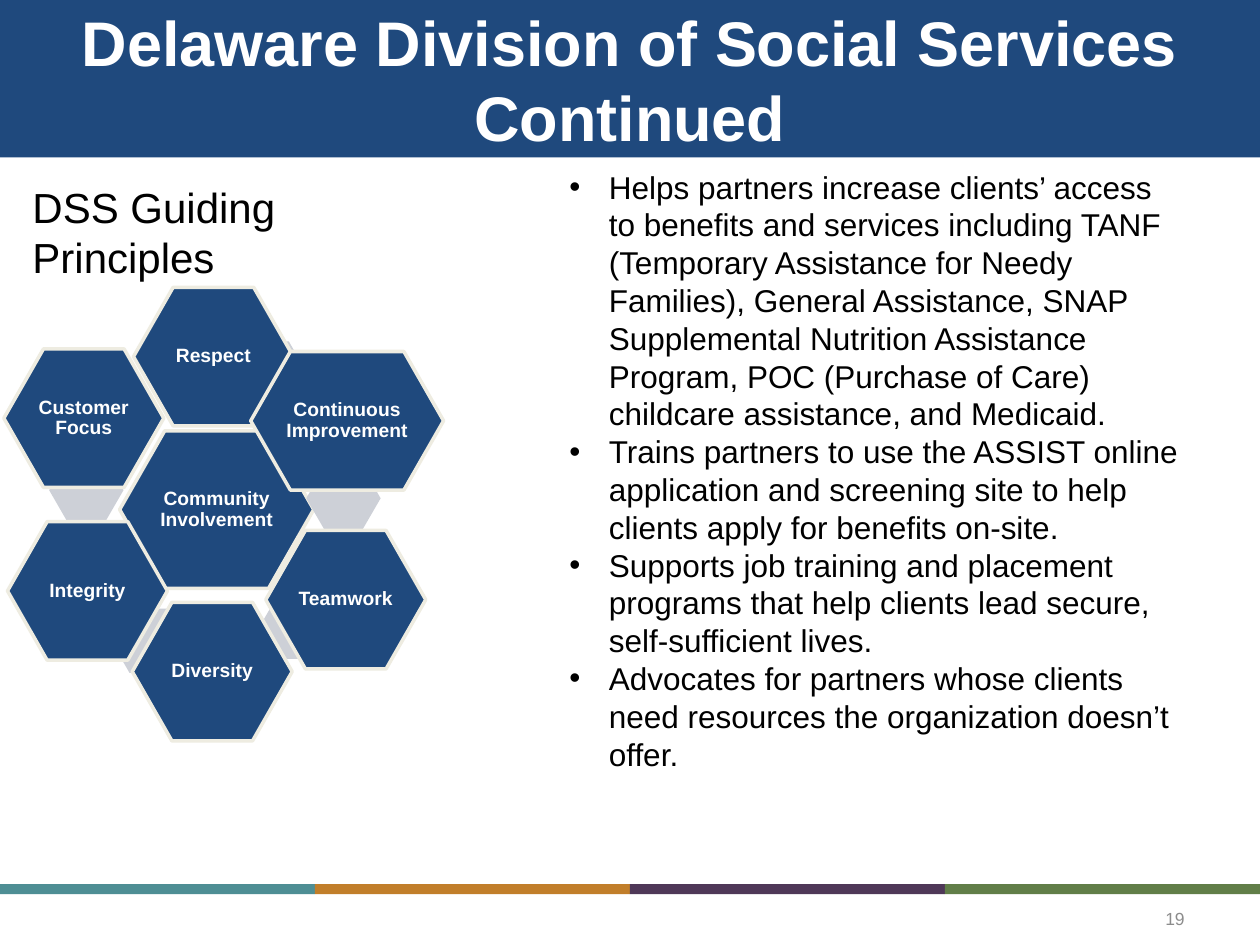
"""Build the guiding principles slide of the Division of Social Services."""
from lxml.etree import SubElement
from pptx import Presentation
from pptx.dml.color import RGBColor as RGB
from pptx.enum.shapes import MSO_SHAPE as Kind
from pptx.enum.text import MSO_ANCHOR as Anchor, MSO_AUTO_SIZE as Auto, PP_ALIGN as Align
from pptx.oxml.ns import qn
from pptx.util import Pt

HUES = {
    "navy": "1F497D", "cream": "EEECE1", "mist": "CDD0D7",
    "white": "FFFFFF", "black": "000000", "gray": "8C8C8C",
    "teal": "4E8E94", "gold": "C17E2A", "plum": "4F3858", "green": "617E48",
}
BANDS = ["teal", "gold", "plum", "green"]
HEX = (91.4, 79.2)
LINK = (42.5, 36.7)
CORE = ("Community Involvement", 68.4, 246.2, 110.9, 90)
RING = [
    ("Respect", 76.3, 164.2, *HEX),
    ("Continuous Improvement", 143.3, 200.9, 110.2, 79.2),
    ("Teamwork", 151.9, 303.1, *HEX),
    ("Integrity", 4.3, 298.1, *HEX),
    ("Diversity", 75.6, 344.2, *HEX),
    ("Customer Focus", 2.2, 199.4, *HEX),
]
LINKS = [
    (133.2, 195.1, *LINK),
    (175, 266.4, *LINK),
    (148.3, 339.8, *LINK),
    (63.4, 347.8, *LINK),
    (28.1, 262.8, 42.5, 34.6),
]
ITEMS = [
    "Helps partners increase clients’ access to benefits and services including "
    "TANF (Temporary Assistance for Needy Families), General Assistance, SNAP "
    "Supplemental Nutrition Assistance Program, POC (Purchase of Care) childcare "
    "assistance, and Medicaid.",
    "Trains partners to use the ASSIST online application and screening site to "
    "help clients apply for benefits on-site.",
    "Supports job training and placement programs that help clients lead secure, "
    "self-sufficient lives.",
    "Advocates for partners whose clients need resources the organization doesn’t offer.",
]


def color(name):
    return RGB.from_string(HUES[name])


def paint(shape, hue):
    shape.fill.solid()
    shape.fill.fore_color.rgb = color(hue)


def place(shape, x, y, w, h):
    shape.left, shape.top, shape.width, shape.height = Pt(x), Pt(y), Pt(w), Pt(h)


def style(para, size, hue, bold=False, align=Align.LEFT):
    para.alignment = align
    for run in para.runs:
        font = run.font
        font.name, font.size, font.bold = "Arial", Pt(size), bold
        font.color.rgb = color(hue)


def add_form(slide, kind, box, hue):
    shape = slide.shapes.add_shape(kind, *map(Pt, box))
    shape.shadow.inherit = False
    paint(shape, hue)
    shape.line.fill.background()
    return shape


def add_value(slide, name, *box):
    shape = add_form(slide, Kind.HEXAGON, box, "navy")
    shape.adjustments[0] = 0.286
    shape.line.color.rgb = color("cream")
    shape.line.width = Pt(2)
    frame = shape.text_frame
    frame.text = name
    frame.word_wrap = True
    frame.vertical_anchor = Anchor.MIDDLE
    frame.margin_left = frame.margin_right = Pt(1.4)
    frame.margin_top = frame.margin_bottom = Pt(1.4)
    para = frame.paragraphs[0]
    para.line_spacing = 0.9
    style(para, 11, "white", True, Align.CENTER)


def add_link(slide, *box):
    shape = add_form(slide, Kind.HEXAGON, box, "mist")
    shape.adjustments[0] = 0.289


def add_note(slide, text, box, size, hue, align=Align.LEFT):
    frame = slide.shapes.add_textbox(*map(Pt, box)).text_frame
    frame.word_wrap = True
    frame.text = text
    style(frame.paragraphs[0], size, hue, align=align)
    return frame


def set_title(slide, text):
    title = slide.shapes.title
    place(title, 0, 0, 720, 90)
    paint(title, "navy")
    frame = title.text_frame
    frame.text = text
    frame.auto_size = Auto.NONE
    frame.vertical_anchor = Anchor.MIDDLE
    style(frame.paragraphs[0], 36, "white", True, Align.CENTER)


def set_list(slide, items):
    body = slide.placeholders[1]
    place(body, 282.2, 92.2, 401.8, 399.6)
    frame = body.text_frame
    frame.auto_size = Auto.SHAPE_TO_FIT_TEXT
    for i, item in enumerate(items):
        para = frame.add_paragraph() if i else frame.paragraphs[0]
        para.text = item
        para.level = 1
        para.space_before = Pt(0)
        props = para._p.get_or_add_pPr()
        props.set("marL", str(Pt(58.5)))
        props.set("indent", str(Pt(-22.5)))
        SubElement(props, qn("a:buFont"), typeface="Arial")
        SubElement(props, qn("a:buChar"), char="•")
        style(para, 18, "black")


def main():
    deck = Presentation()
    deck.slide_width, deck.slide_height = Pt(720), Pt(540)
    slide = deck.slides.add_slide(deck.slide_layouts[1])
    set_title(slide, "Delaware Division of Social Services Continued")
    set_list(slide, ITEMS)
    for i, hue in enumerate(BANDS):
        add_form(slide, Kind.RECTANGLE, (180 * i, 505.2, 180, 5.8), hue)
    page = add_note(slide, "19", (516, 510.5, 168, 28.8), 10, "gray", Align.RIGHT)
    page.vertical_anchor = Anchor.MIDDLE
    head = add_note(slide, "DSS Guiding Principles", (11.5, 100, 261.4, 65.5), 24, "black")
    head.paragraphs[0].runs[0].font.bold = False
    add_value(slide, *CORE)
    for box in LINKS:
        add_link(slide, *box)
    for value in RING:
        add_value(slide, *value)
    deck.save("out.pptx")


if __name__ == "__main__":
    main()
